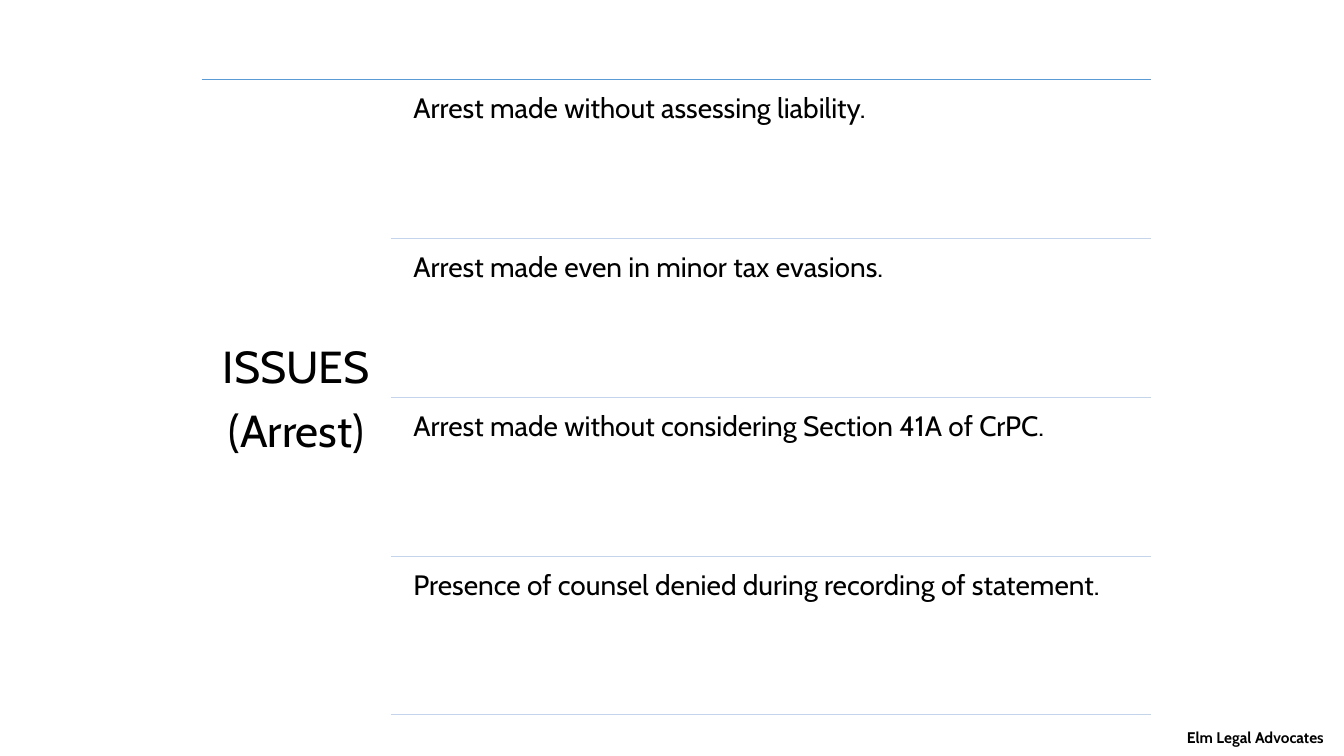
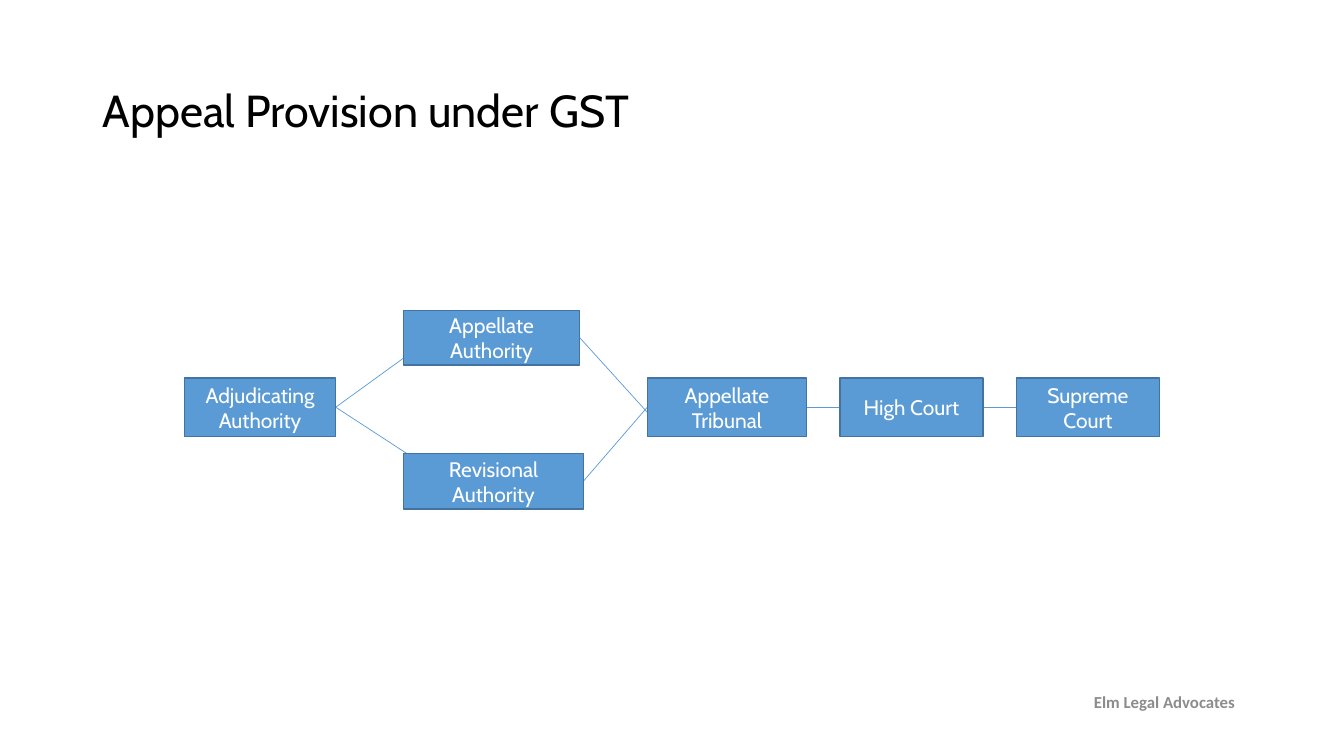
import pptx
import pptx.dml.color
import pptx.enum.shapes
import pptx.enum.text
import pptx.oxml
import pptx.util

Inches = pptx.util.Inches
Pt = pptx.util.Pt
RGBColor = pptx.dml.color.RGBColor
Align = pptx.enum.text.PP_ALIGN
Anchor = pptx.enum.text.MSO_ANCHOR

BLACK = RGBColor(0x00, 0x00, 0x00)
WHITE = RGBColor(0xFF, 0xFF, 0xFF)
GRAY = RGBColor(0x8C, 0x8C, 0x8C)
BLUE = RGBColor(0x5B, 0x9B, 0xD5)
DARK_BLUE = RGBColor(0x43, 0x73, 0x9E)
PALE_BLUE = RGBColor(0xC4, 0xD5, 0xEB)

FONT = "Cabin"
FOOTER = "Elm Legal Advocates"
EFFECT_LIST = '<a:effectLst xmlns:a="http://schemas.openxmlformats.org/drawingml/2006/main"/>'


class Deck:
    """Holds the shared style and the current slide."""

    def __init__(self):
        self.presentation = pptx.Presentation()
        self.presentation.slide_width = Inches(13.33)
        self.presentation.slide_height = Inches(7.5)
        self.slide = None

    def add_slide(self):
        layout = self.presentation.slide_layouts.get_by_name("Title Only")
        self.slide = self.presentation.slides.add_slide(layout)

    def set_text(self, shape, lines, size, color=BLACK, align=Align.LEFT, anchor=Anchor.TOP,
                 font=FONT, bold=False, spacing=1.0, after=0, inset=None):
        frame = shape.text_frame
        frame.text = "\n".join(lines)
        frame.word_wrap = True
        frame.auto_size = pptx.enum.text.MSO_AUTO_SIZE.NONE
        frame.vertical_anchor = anchor
        if inset is not None:
            frame.margin_left = frame.margin_right = Inches(inset)
            frame.margin_top = frame.margin_bottom = Inches(inset)
        for paragraph in frame.paragraphs:
            paragraph.alignment = align
            paragraph.line_spacing = spacing
            paragraph.space_after = Pt(after)
            paragraph.font.name = font
            paragraph.font.size = Pt(size)
            paragraph.font.bold = bold
            paragraph.font.color.rgb = color

    def title(self, lines, left, top, width, height, **style):
        shape = self.slide.shapes.title
        shape.left, shape.top = Inches(left), Inches(top)
        shape.width, shape.height = Inches(width), Inches(height)
        self.set_text(shape, lines, 32, anchor=Anchor.MIDDLE, spacing=0.9, **style)

    def text(self, text, left, top, width, height, size, **style):
        shape = self.slide.shapes.add_textbox(
            Inches(left), Inches(top), Inches(width), Inches(height))
        self.set_text(shape, [text], size, **style)

    def box(self, text, left, top, width, height):
        shape = self.slide.shapes.add_shape(
            pptx.enum.shapes.MSO_SHAPE.RECTANGLE,
            Inches(left), Inches(top), Inches(width), Inches(height))
        shape.shadow.inherit = False
        shape.fill.solid()
        shape.fill.fore_color.rgb = BLUE
        shape.line.color.rgb = DARK_BLUE
        shape.line.width = Pt(1)
        self.set_text(shape, [text], 15, WHITE, Align.CENTER, Anchor.MIDDLE)

    def line(self, x1, y1, x2, y2, color=BLUE):
        connector = self.slide.shapes.add_connector(
            pptx.enum.shapes.MSO_CONNECTOR.STRAIGHT,
            Inches(x1), Inches(y1), Inches(x2), Inches(y2))
        connector.line.color.rgb = color
        connector.line.width = Pt(0.5)
        connector._element.spPr.append(pptx.oxml.parse_xml(EFFECT_LIST))


def add_arrest_issues(deck):
    deck.add_slide()
    top, row_height, right = 0.79, 1.575, 11.42
    deck.line(2, top, right, top)
    deck.title(["ISSUES", "(Arrest)"], 2, top, 1.88, 6.38,
               align=Align.CENTER, after=11.2, inset=0.13)

    # One row per issue, each closed by a pale rule
    issues = [
        "Arrest made without assessing liability.",
        "Arrest made even in minor tax evasions.",
        "Arrest made without considering Section 41A of CrPC.",
        "Presence of counsel denied during recording of statement.",
    ]
    for index, issue in enumerate(issues):
        row_top = top + index * row_height
        deck.text(issue, 4.02, row_top + 0.07, 7.39, 1.5, 20,
                  spacing=0.9, after=7, inset=0.08)
        rule = row_top + row_height
        deck.line(3.88, rule, right, rule, PALE_BLUE)

    deck.text(FOOTER, 11.55, 7.17, 1.68, 0.3, 11, align=Align.RIGHT, bold=True)


def add_appeal_flow(deck):
    deck.add_slide()
    deck.title(["Appeal Provision under GST"], 0.92, 0.4, 11.5, 1.45, align=Align.LEFT)

    # Links, placed behind the boxes
    middle = 4.04
    links = [
        (3.33, middle, 4.42, 3.25),
        (3.33, middle, 4.42, 4.75),
        (5.75, 3.35, 6.42, 4.09),
        (5.79, 4.77, 6.42, middle),
        (8, middle, 8.33, middle),
        (9.75, middle, 10.17, middle),
    ]
    for link in links:
        deck.line(*link)

    # Authorities and courts
    row_top, row_height = 3.75, 0.58
    boxes = [
        ("Adjudicating Authority", 1.83, row_top, 1.5, row_height),
        ("Appellate Authority", 4, 3.08, 1.75, 0.54),
        ("Revisional Authority", 4, 4.5, 1.79, 0.55),
        ("Appellate Tribunal", 6.42, row_top, 1.58, row_height),
        ("High Court", 8.33, row_top, 1.42, row_height),
        ("Supreme Court", 10.08, row_top, 1.42, row_height),
    ]
    for box in boxes:
        deck.box(*box)

    deck.text(FOOTER, 10.68, 6.76, 1.74, 0.4, 12, color=GRAY, align=Align.CENTER,
              anchor=Anchor.MIDDLE, font="Calibri", bold=True)


def main():
    deck = Deck()
    add_arrest_issues(deck)
    add_appeal_flow(deck)
    deck.presentation.save("out.pptx")


if __name__ == "__main__":
    main()
